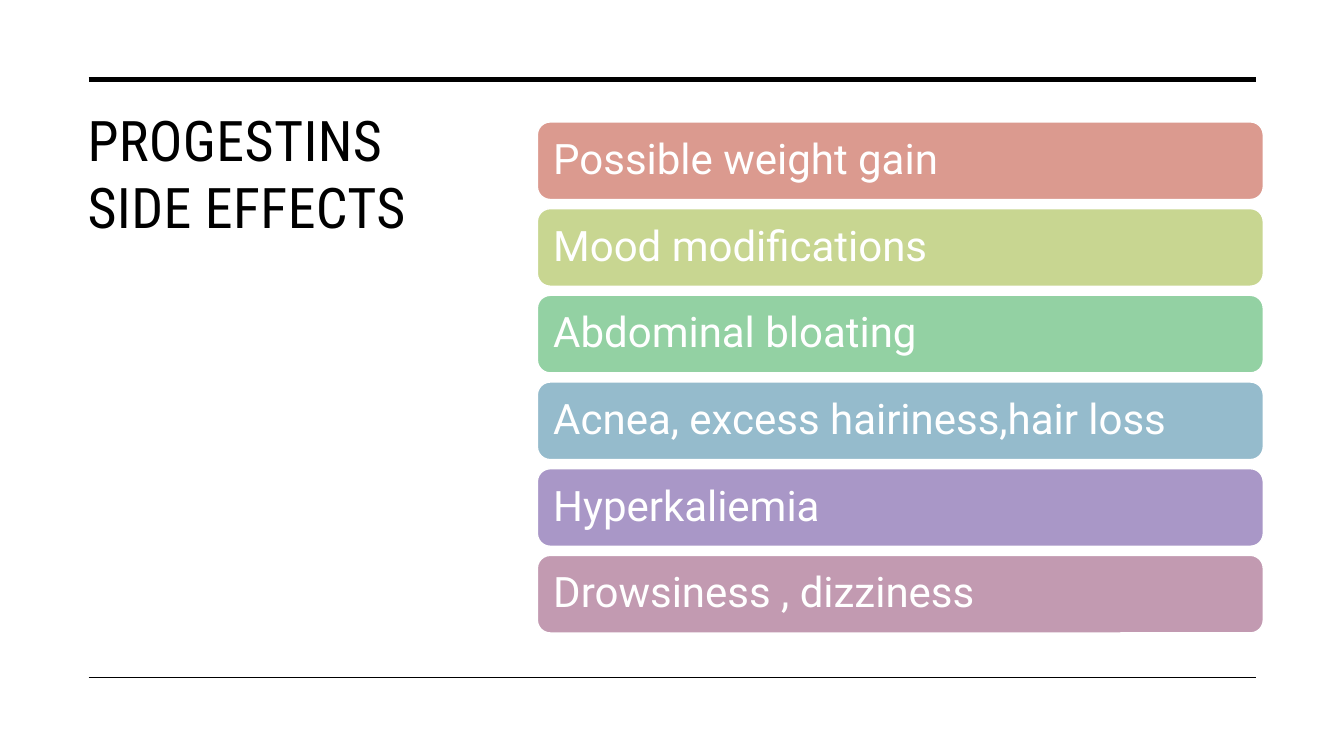
from dataclasses import dataclass

from pptx import Presentation
from pptx.dml.color import RGBColor
from pptx.enum.shapes import MSO_CONNECTOR, MSO_SHAPE
from pptx.enum.text import MSO_ANCHOR, PP_ALIGN
from pptx.oxml.ns import qn
from pptx.util import Inches, Pt
from lxml import etree

STRAIGHT = MSO_CONNECTOR.STRAIGHT
ROUND = MSO_SHAPE.ROUNDED_RECTANGLE
TOP, MIDDLE = MSO_ANCHOR.TOP, MSO_ANCHOR.MIDDLE
LEFT = PP_ALIGN.LEFT


@dataclass(frozen=True)
class Theme:
    ink: str = "000000"
    paper: str = "FFFFFF"
    head_font: str = "Roboto Condensed"
    body_font: str = "Roboto"
    head_size: int = 40
    body_size: int = 30


THEME = Theme()
EFFECTS = [
    ("Possible weight gain", "DB9A8F"),
    ("Mood modifications", "C8D691"),
    ("Abdominal bloating", "93D1A3"),
    ("Acnea, excess hairiness,hair loss", "95BBCC"),
    ("Hyperkaliemia", "A997C7"),
    ("Drowsiness , dizziness", "C29AB1"),
]
BAR_TOP, BAR_STEP = 1.21, 0.86


def color(code):
    return RGBColor.from_string(code)


def add_rule(slide, y, width):
    rule = slide.shapes.add_connector(
        STRAIGHT, Inches(0.88), Inches(y), Inches(12.46), Inches(y))
    rule.line.color.rgb = color(THEME.ink)
    rule.line.width = Pt(width)
    etree.SubElement(rule._element.spPr, qn("a:effectLst"))


def add_run(para, text, font, size, code):
    run = para.add_run()
    run.text = text
    run.font.name = font
    run.font.size = Pt(size)
    run.font.color.rgb = color(code)
    return run


def add_title(slide, text):
    box = slide.shapes.add_textbox(
        Inches(0.77), Inches(1), Inches(4), Inches(4.82))
    frame = box.text_frame
    frame.word_wrap = True
    frame.vertical_anchor = TOP
    run = add_run(frame.paragraphs[0], text, THEME.head_font,
                  THEME.head_size, THEME.ink)
    run.font._element.set("spc", "30")


def add_bar(slide, y, text, fill):
    bar = slide.shapes.add_shape(
        ROUND, Inches(5.33), Inches(y), Inches(7.2), Inches(0.77))
    bar.shadow.inherit = False
    bar.fill.solid()
    bar.fill.fore_color.rgb = color(fill)
    bar.line.color.rgb = color(THEME.paper)
    bar.line.width = Pt(1)
    frame = bar.text_frame
    frame.word_wrap = True
    frame.vertical_anchor = MIDDLE
    frame.margin_left = frame.margin_right = Inches(0.12)
    frame.margin_top = frame.margin_bottom = Inches(0.12)
    para = frame.paragraphs[0]
    para.alignment = LEFT
    para.line_spacing = 0.9
    add_run(para, text, THEME.body_font, THEME.body_size, THEME.paper)


def main():
    deck = Presentation()
    deck.slide_width = Inches(13.33)
    deck.slide_height = Inches(7.5)
    slide = deck.slides.add_slide(deck.slide_layouts[6])
    add_rule(slide, 0.79, 3.5)
    add_rule(slide, 6.72, 1)
    add_title(slide, "PROGESTINS SIDE EFFECTS")
    for row, (text, fill) in enumerate(EFFECTS):
        add_bar(slide, BAR_TOP + row * BAR_STEP, text, fill)
    deck.save("out.pptx")


if __name__ == "__main__":
    main()
